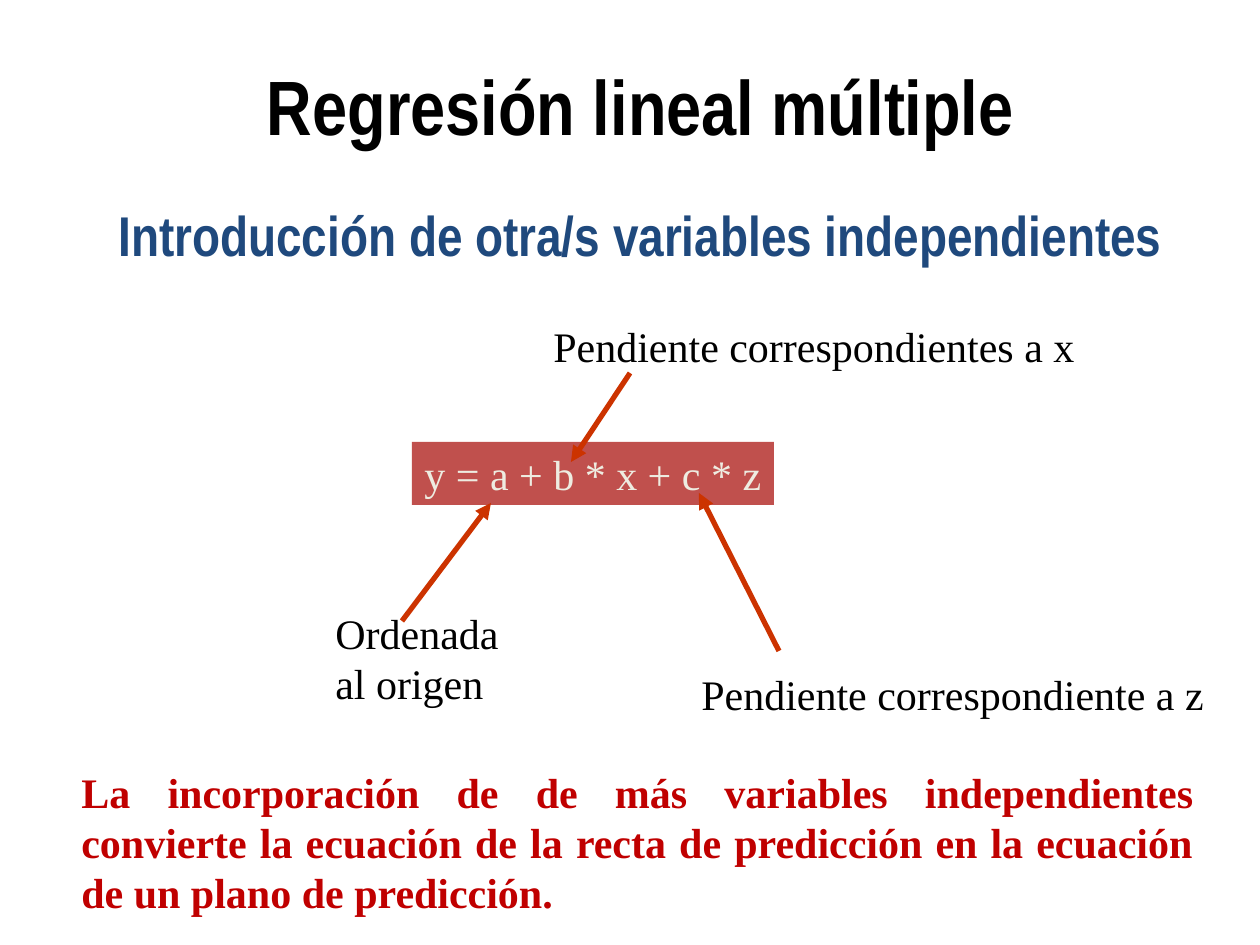
from dataclasses import dataclass

from lxml import etree
from pptx import Presentation
from pptx.dml.color import RGBColor
from pptx.enum.shapes import MSO_CONNECTOR, MSO_SHAPE
from pptx.enum.text import MSO_ANCHOR, PP_ALIGN
from pptx.oxml.ns import qn
from pptx.util import Inches, Pt

LINE = MSO_CONNECTOR.STRAIGHT
RECT = MSO_SHAPE.RECTANGLE
TOP, MIDDLE = MSO_ANCHOR.TOP, MSO_ANCHOR.MIDDLE
LEFT, CENTER, JUSTIFY = PP_ALIGN.LEFT, PP_ALIGN.CENTER, PP_ALIGN.JUSTIFY
SCALE = Inches(1) / 126


def px(*nums):
    """Turn pixel lengths into EMU."""
    return [round(n * SCALE) for n in nums]


@dataclass(frozen=True)
class Theme:
    """Colours, fonts and type sizes of the slide."""
    black: str = "000000"
    blue: str = "1F497D"
    red: str = "C00000"
    box: str = "C0504D"
    cream: str = "EEECE1"
    arrow: str = "CC3300"
    head: str = "Arial Narrow"
    body: str = "Times New Roman"
    title: int = 44
    sub: int = 32
    text: int = 24
    stroke: int = 3


class Deck:
    """Holds the theme and the current slide and draws each kind of element."""

    def __init__(self, theme):
        """Start a deck with one blank slide."""
        self.theme = theme
        self.prs = Presentation()
        self.prs.slide_width, self.prs.slide_height = px(1260, 945)
        self.slide = self.prs.slides.add_slide(self.prs.slide_layouts[6])

    def letter(self, shape, text, color, size, font, bold, align, anchor, wrap):
        """Set and format the text of a shape."""
        frame = shape.text_frame
        frame.text = text
        frame.word_wrap = wrap
        frame.vertical_anchor = anchor
        para = frame.paragraphs[0]
        para.alignment = align
        face = para.runs[0].font
        face.name, face.size, face.bold = font, Pt(size), bold
        face.color.rgb = RGBColor.from_string(color)

    def heading(self, at, text, color, size):
        """Add a centred bold heading."""
        shape = self.slide.shapes.add_textbox(*px(*at))
        self.letter(shape, text, color, size, self.theme.head, True, CENTER, MIDDLE, True)

    def label(self, at, text, wrap=False):
        """Add a plain label."""
        shape = self.slide.shapes.add_textbox(*px(*at))
        look = self.theme
        self.letter(shape, text, look.black, look.text, look.body, False, LEFT, TOP, wrap)

    def note(self, at, text):
        """Add a bold justified paragraph."""
        shape = self.slide.shapes.add_textbox(*px(*at))
        look = self.theme
        self.letter(shape, text, look.red, look.text, look.body, True, JUSTIFY, TOP, True)

    def formula(self, at, text):
        """Add a filled box with a formula."""
        look = self.theme
        shape = self.slide.shapes.add_shape(RECT, *px(*at))
        shape.shadow.inherit = False
        shape.fill.solid()
        shape.fill.fore_color.rgb = RGBColor.from_string(look.box)
        shape.line.fill.background()
        self.letter(shape, text, look.cream, look.text, look.body, False, LEFT, TOP, False)

    def arrow(self, start, end):
        """Add an arrow that points at its end."""
        link = self.slide.shapes.add_connector(LINE, *px(*start, *end))
        link.line.color.rgb = RGBColor.from_string(self.theme.arrow)
        link.line.width = Pt(self.theme.stroke)
        props = link.element.spPr
        etree.SubElement(props.find(qn("a:ln")), qn("a:tailEnd"), type="triangle")
        etree.SubElement(props, qn("a:effectLst"))


def main():
    """Build the slide and save it."""
    theme = Theme()
    deck = Deck(theme)
    deck.heading((84, 26, 1114, 158), "Regresión lineal múltiple", theme.black, theme.title)
    deck.heading((84, 155, 1114, 158), "Introducción de otra/s variables independientes",
                 theme.blue, theme.sub)
    deck.formula((412, 442, 362, 63), "y = a + b * x + c * z")
    deck.label((323, 601, 203, 113), "Ordenada al origen", wrap=True)
    deck.label((541, 314, 547, 63), "Pendiente correspondientes a x")
    deck.label((689, 662, 528, 63), "Pendiente correspondiente a z")
    for start, end in (
        ((402, 621), (491, 503)),
        ((630, 373), (571, 462)),
        ((779, 651), (699, 493)),
    ):
        deck.arrow(start, end)
    deck.note((69, 760, 1137, 165),
              "La incorporación de de más variables independientes convierte la ecuación "
              "de la recta de predicción en la ecuación de un plano de predicción.")
    deck.prs.save("out.pptx")


if __name__ == "__main__":
    main()
